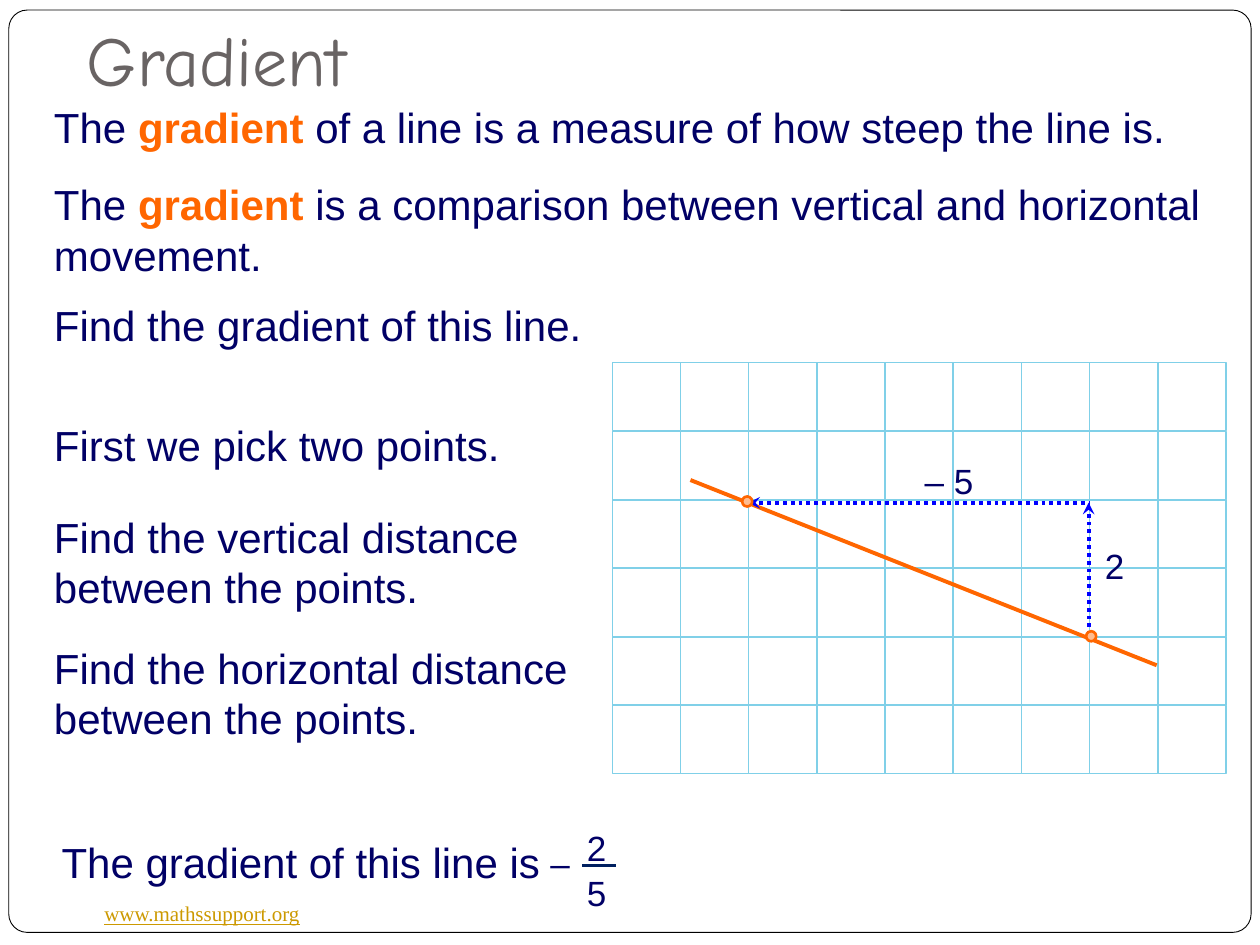
from dataclasses import dataclass
from lxml import etree
from pptx import Presentation
from pptx.dml.color import RGBColor
from pptx.enum.dml import MSO_LINE
from pptx.enum.shapes import MSO_CONNECTOR, MSO_SHAPE
from pptx.enum.text import MSO_ANCHOR, MSO_AUTO_SIZE, PP_ALIGN
from pptx.oxml.ns import qn
from pptx.util import Inches, Pt

RECT, ROUND, OVAL = MSO_SHAPE.RECTANGLE, MSO_SHAPE.ROUNDED_RECTANGLE, MSO_SHAPE.OVAL
STRAIGHT, DOTS = MSO_CONNECTOR.STRAIGHT, MSO_LINE.ROUND_DOT


@dataclass(frozen=True)
class Theme:
    white: str = "FFFFFF"
    black: str = "000000"
    grid: str = "80D0E8"
    grey: str = "696464"
    navy: str = "010066"
    bar: str = "002060"
    orange: str = "FF6600"
    peach: str = "FFBC8F"
    blue: str = "0000FF"
    gold: str = "CC9900"
    head: int = 40
    text: int = 24
    label: int = 20
    small: int = 12
    sans: str = "Arial"
    comic: str = "Comic Neue"
    serif: str = "Times New Roman"


theme = Theme()
deck = Presentation()
deck.slide_width, deck.slide_height = Inches(10), Inches(7.5)
slide = deck.slides.add_slide(deck.slide_layouts[5])
shapes = slide.shapes


def add_box(kind, left, top, width, height, fill, line, weight):
    box = shapes.add_shape(kind, Inches(left), Inches(top), Inches(width), Inches(height))
    box.shadow.inherit = False
    box.fill.solid()
    box.fill.fore_color.rgb = RGBColor.from_string(fill)
    box.line.color.rgb = RGBColor.from_string(line)
    box.line.width = Pt(weight)
    return box


def style(run, size, color, name):
    run.font.size = Pt(size)
    run.font.color.rgb = RGBColor.from_string(color)
    run.font.name = name


frame = add_box(ROUND, 0.07, 0.08, 9.86, 7.32, theme.white, theme.black, 0.5)
frame.adjustments[0] = 0.02

left, top, cell = 4.86, 2.88, 0.54
for row in range(6):
    for col in range(9):
        add_box(RECT, left + col * 4.33 / 8, top + row * 2.72 / 5, cell, cell,
                theme.white, theme.grid, 0.75)

title = shapes.title
title.element.getparent().append(title.element)
title.left, title.top = Inches(0.59), Inches(-0.03)
title.width, title.height = Inches(9), Inches(0.93)
body = title.text_frame
body.text = "Gradient"
body.vertical_anchor = MSO_ANCHOR.BOTTOM
body.margin_bottom = Inches(0.1)
body.paragraphs[0].alignment = PP_ALIGN.LEFT
style(body.paragraphs[0].runs[0], theme.head, theme.grey, theme.comic)

lines = [
    (9.18, 5.28, 5.48, 3.81, theme.orange, 2.25, False),
    (5.94, 3.99, 8.64, 3.99, theme.blue, 2.25, True),
    (8.64, 3.99, 8.64, 5.09, theme.blue, 2.25, True),
    (4.62, 6.87, 4.89, 6.87, theme.bar, 2, False),
]
for x1, y1, x2, y2, color, weight, arrow in lines:
    line = shapes.add_connector(STRAIGHT, Inches(x1), Inches(y1), Inches(x2), Inches(y2))
    line.line.color.rgb = RGBColor.from_string(color)
    line.line.width = Pt(weight)
    if arrow:
        line.line.dash_style = DOTS
        stroke = line.line._get_or_add_ln()
        etree.SubElement(stroke, qn("a:headEnd"), type="stealth")
    props = line.element.find(qn("p:spPr"))
    etree.SubElement(props, qn("a:effectLst"))

for x, y in [(8.62, 5.01), (5.89, 3.94)]:
    add_box(OVAL, x, y, 0.08, 0.08, theme.peach, theme.orange, 1.5)

big = theme.text, theme.navy, theme.sans
mid = theme.label, theme.navy, theme.sans
tiny = theme.small, theme.gold, theme.serif
texts = [
    (0.33, 0.76, 9.02, 0.5, False, big,
     ["The ", "gradient", " of a line is a measure of how steep the line is."]),
    (0.33, 1.37, 9.55, 0.91, True, big,
     ["The ", "gradient", " is a comparison between vertical and horizontal movement."]),
    (0.33, 2.33, 4.63, 0.5, False, big, ["Find the gradient of this line."]),
    (0.33, 3.28, 3.87, 0.5, False, big, ["First we pick two points."]),
    (0.33, 4.01, 4.31, 0.91, True, big, ["Find the vertical distance between the points."]),
    (0.33, 5.05, 4.31, 0.91, True, big, ["Find the horizontal distance between the points."]),
    (0.39, 6.59, 4.23, 0.5, False, big, ["The gradient of this line is"]),
    (8.67, 4.27, 0.36, 0.44, False, mid, ["2"]),
    (7.24, 3.6, 0.59, 0.44, False, mid, ["– 5"]),
    (4.27, 6.63, 0.36, 0.44, False, mid, ["–"]),
    (4.56, 6.51, 0.36, 0.44, False, mid, ["2"]),
    (4.56, 6.87, 0.36, 0.44, False, mid, ["5"]),
    (0.73, 7.1, 1.77, 0.3, False, tiny, ["www.mathssupport.org"]),
]
for x, y, width, height, wrap, look, parts in texts:
    box = shapes.add_textbox(Inches(x), Inches(y), Inches(width), Inches(height))
    body = box.text_frame
    body.word_wrap = wrap
    body.auto_size = MSO_AUTO_SIZE.SHAPE_TO_FIT_TEXT
    for part in parts:
        run = body.paragraphs[0].add_run()
        run.text = part
        style(run, *look)
        if part == "gradient":
            run.font.bold = True
            run.font.color.rgb = RGBColor.from_string(theme.orange)
        run.font.underline = True if look == tiny else None

deck.save("out.pptx")
